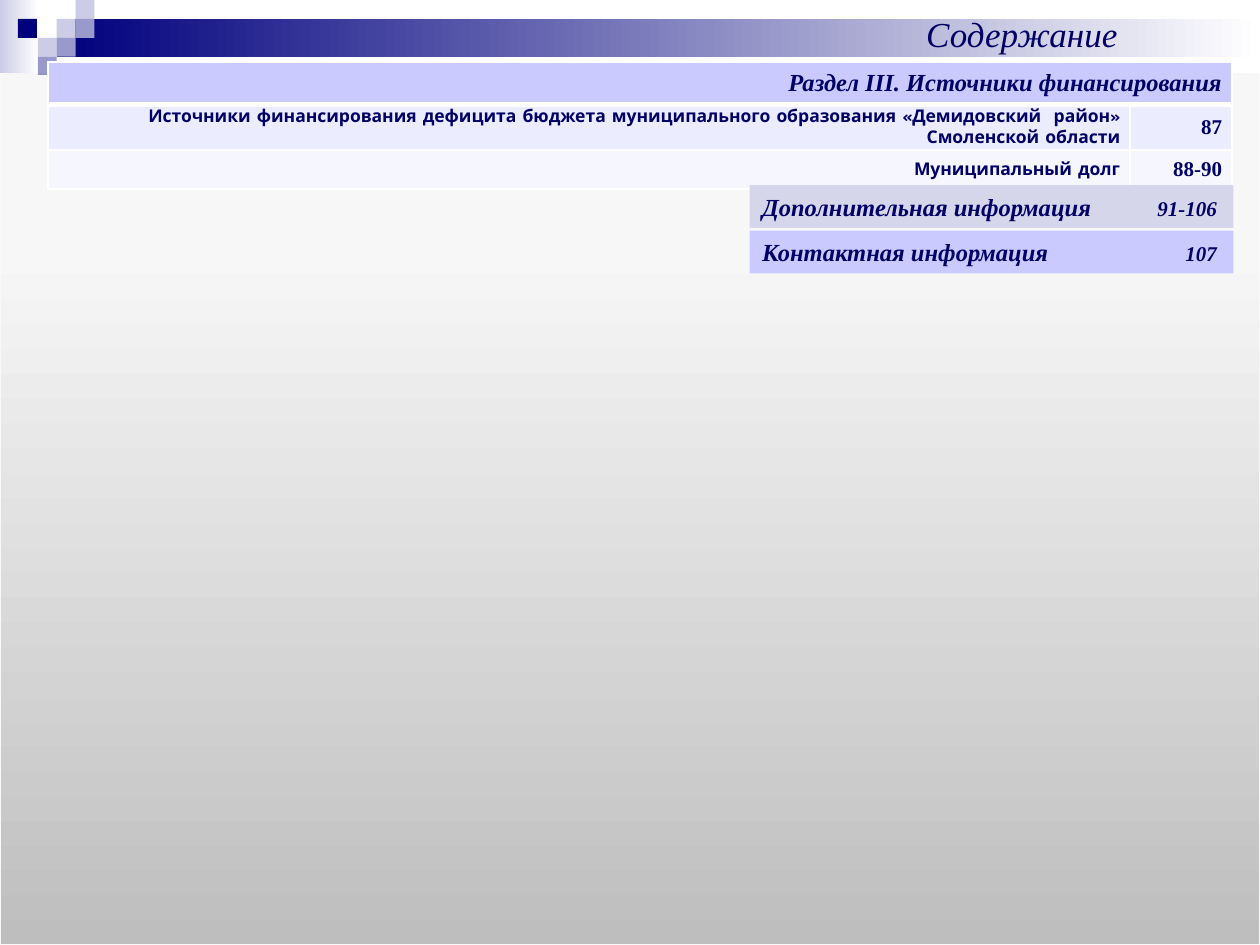
from copy import deepcopy

from lxml import etree
from pptx import Presentation, util as u
from pptx.dml.color import RGBColor
from pptx.enum import shapes, text
from pptx.oxml import parse_xml
from pptx.oxml.ns import nsdecls, qn

NAVY = RGBColor(0x00, 0x00, 0x7D)
TEXT = RGBColor(0x00, 0x00, 0x66)
WHITE = RGBColor(0xFF, 0xFF, 0xFF)
PALE = RGBColor(0xCC, 0xCC, 0xE6)
MEDIUM = RGBColor(0x99, 0x99, 0xCC)
LILAC = RGBColor(0xCA, 0xCA, 0xFF)
LAVENDER = RGBColor(0xD6, 0xD6, 0xEB)
ROW_DARK = RGBColor(0xEC, 0xEC, 0xFF)
ROW_LIGHT = RGBColor(0xF6, 0xF6, 0xFF)
GREY = RGBColor(0xBE, 0xBE, 0xBE)
NEAR_WHITE = RGBColor(0xF7, 0xF7, 0xF7)
OFF_WHITE = RGBColor(0xF8, 0xF8, 0xF8)
EDGE = RGBColor(0xF9, 0xF9, 0xF9)
SERIF, COMIC = "Times New Roman", "Comic Neue"

presentation = Presentation()
presentation.slide_width, presentation.slide_height = u.Inches(10), u.Inches(7.5)
slide = presentation.slides.add_slide(presentation.slide_layouts[5])


def add_block(left, top, width, height, stops, angle=0, kind=shapes.MSO_SHAPE.RECTANGLE):
    """Add a borderless shape; one (position, colour) stop is a solid fill, more a gradient."""
    shape = slide.shapes.add_shape(kind, *map(u.Inches, (left, top, width, height)))
    shape.shadow.inherit = False
    shape.line.fill.background()
    if len(stops) == 1:
        shape.fill.solid()
        shape.fill.fore_color.rgb = stops[0][1]
        return shape
    shape.fill.gradient()
    shape.fill.gradient_angle = angle
    stop_list = shape._element.spPr.find(qn("a:gradFill")).find(qn("a:gsLst"))
    while len(stop_list) < len(stops):
        stop_list.append(deepcopy(stop_list[-1]))
    for stop, (position, colour) in zip(shape.fill.gradient_stops, stops):
        stop.position, stop.color.rgb = position, colour
    return shape


def add_run(paragraph, words, **formats):
    run = paragraph.add_run()
    run.text = words
    run.font.color.rgb = TEXT
    for name, value in formats.items():
        setattr(run.font, name, value)


# Header band and its mosaic of squares
UNIT = 0.15
add_block(0, 0, 0.31, 0.58, [(0, PALE), (1, WHITE)])
add_block(3 * UNIT, UNIT, 10 - 3 * UNIT, 2 * UNIT, [(0, NAVY), (1, WHITE)])
mosaic = [(3, 1, PALE), (4, 0, PALE), (4, 1, MEDIUM), (2, 2, PALE),
          (0.95, 1, NAVY), (3, 2, MEDIUM), (2, 3, MEDIUM)]
for column, row, colour in mosaic:
    add_block(column * UNIT, row * UNIT, UNIT, UNIT, [(0, colour)])

# Grey panel below the band
panel = add_block(0, 4 * UNIT, 10, 7.5 - 4 * UNIT,
                  [(0, GREY), (0.8, NEAR_WHITE), (1, OFF_WHITE)],
                  90, shapes.MSO_SHAPE.FLOWCHART_PROCESS)
panel.line.color.rgb = EDGE
panel.line.width = u.Pt(0.75)
effects = panel._element.spPr.find(qn("a:effectLst"))
effects.append(parse_xml(
    f'<a:outerShdw {nsdecls("a")} blurRad="{u.Pt(3.1)}" dist="{u.Pt(1.8)}" dir="5400000" '
    'rotWithShape="0"><a:srgbClr val="000000"><a:alpha val="35000"/></a:srgbClr></a:outerShdw>'))

# Title, raised above the band
title = slide.shapes.title
title.left, title.top, title.width, title.height = map(u.Inches, (6.26, 0.05, 3.7, 0.44))
title.text_frame.auto_size = text.MSO_AUTO_SIZE.NONE
title.text_frame.vertical_anchor = text.MSO_ANCHOR.TOP
title_paragraph = title.text_frame.paragraphs[0]
title_paragraph.alignment = text.PP_ALIGN.CENTER
add_run(title_paragraph, "Содержание", name=SERIF, size=u.Pt(20), italic=True)
slide.shapes._spTree.append(title._element)

# Contents table
rows = [
    (0.34, LILAC, ["Раздел III. Источники финансирования", ""]),
    (0.36, ROW_DARK, ["Источники финансирования дефицита бюджета муниципального образования "
                      "«Демидовский  район» Смоленской области", "87"]),
    (0.31, ROW_LIGHT, ["Муниципальный долг", "88-90"]),
]
header_format = {"name": SERIF, "size": u.Pt(14), "italic": True}
column_formats = [{"name": COMIC, "size": u.Pt(10), "italic": False},
                  {"name": SERIF, "size": u.Pt(12), "italic": False}]
cell_format = {"margin_left": u.Inches(0.08), "margin_right": u.Inches(0.08),
               "margin_top": 0, "margin_bottom": 0, "vertical_anchor": text.MSO_ANCHOR.MIDDLE}
table = slide.shapes.add_table(len(rows), 2, *map(u.Inches, (0.38, 0.49, 9.4, 1.01))).table
table.first_row = table.horz_banding = False
table.columns[0].width, table.columns[1].width = u.Inches(8.59), u.Inches(0.81)
table.cell(0, 0).merge(table.cell(0, 1))
for row, (height, colour, entries) in enumerate(rows):
    table.rows[row].height = u.Inches(height)
    for column, words in enumerate(entries):
        cell = table.cell(row, column)
        for name, value in cell_format.items():
            setattr(cell, name, value)
        properties = cell._tc.get_or_add_tcPr()
        for side in ("lnL", "lnR", "lnT", "lnB"):
            thick = (row, side) in ((0, "lnB"), (1, "lnT"))
            border = etree.SubElement(properties, qn(f"a:{side}"), w=str(u.Pt(3 if thick else 1)))
            fill = etree.SubElement(border, qn("a:solidFill"))
            etree.SubElement(fill, qn("a:srgbClr"), val=str(WHITE))
        cell.fill.solid()
        cell.fill.fore_color.rgb = colour
        if words:
            paragraph = cell.text_frame.paragraphs[0]
            paragraph.alignment = text.PP_ALIGN.RIGHT
            add_run(paragraph, words, bold=True,
                    **(header_format if row == 0 else column_formats[column]))

# Section bars, page numbers set at a right tab
bars = [("Дополнительная информация", "91-106", LAVENDER),
        ("Контактная информация", "107", LILAC)]
for index, (section, pages, colour) in enumerate(bars):
    bar = add_block(5.95, 1.47 + 0.36 * index, 3.84, 0.34, [(0, colour)])
    bar.text_frame.word_wrap = True
    bar.text_frame.vertical_anchor = text.MSO_ANCHOR.MIDDLE
    paragraph = bar.text_frame.paragraphs[0]
    paragraph.alignment = text.PP_ALIGN.LEFT
    tabs = etree.SubElement(paragraph._p.get_or_add_pPr(), qn("a:tabLst"))
    etree.SubElement(tabs, qn("a:tab"), pos=str(u.Inches(3.61)), algn="r")
    for words, size in ((section + "\t", 14), (pages, 12)):
        add_run(paragraph, words, name=SERIF, size=u.Pt(size), bold=True, italic=True)

presentation.save("out.pptx")
